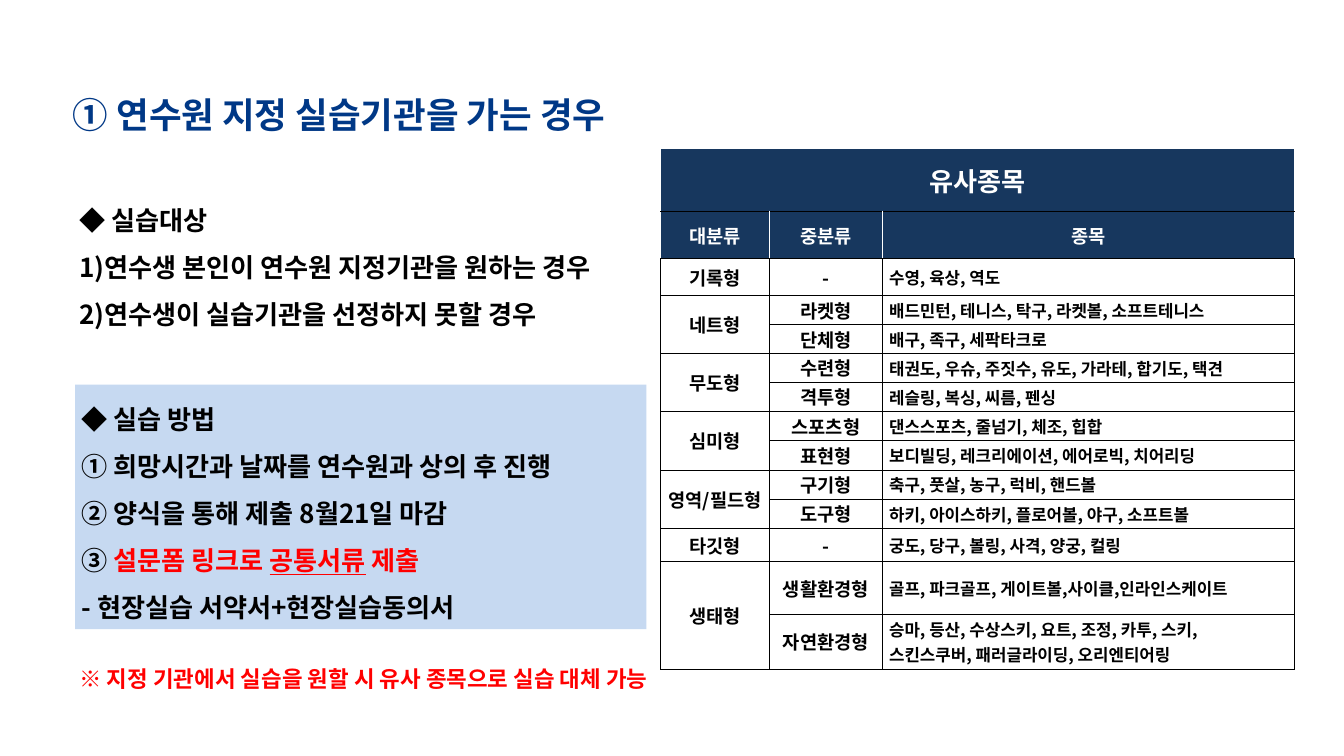
from dataclasses import dataclass

from lxml.etree import SubElement
from pptx import Presentation
from pptx.dml.color import RGBColor
from pptx.enum.shapes import MSO_SHAPE as Shape
from pptx.enum.text import MSO_ANCHOR as Anchor, MSO_AUTO_SIZE as AutoSize, PP_ALIGN as Align
from pptx.oxml.ns import qn
from pptx.util import Pt


@dataclass(frozen=True)
class Theme:
    korean: str = "Noto Sans CJK KR"
    latin: str = "Calibri"
    blue: str = "003886"
    navy: str = "17375E"
    pale: str = "C6D9F1"
    red: str = "FF0000"
    black: str = "000000"
    white: str = "FFFFFF"
    title: int = 38
    body: int = 28
    note: int = 24
    label: int = 20
    events: int = 18
    body_pitch: float = 50.4
    note_pitch: int = 30


THEME = Theme()

COLUMN_WIDTHS = [116.6, 121, 442]
ROW_HEIGHTS = [67, 51, 39.5, 31, 31, 31, 31, 31.5, 31.5, 31.5, 31, 36, 56, 59]
HEADINGS = ["대분류", "중분류", "종목"]
CATEGORIES = [
    ("기록형", [("-", "수영, 육상, 역도")]),
    ("네트형", [("라켓형", "배드민턴, 테니스, 탁구, 라켓볼, 소프트테니스"),
             ("단체형", "배구, 족구, 세팍타크로")]),
    ("무도형", [("수련형", "태권도, 우슈, 주짓수, 유도, 가라테, 합기도, 택견"),
             ("격투형", "레슬링, 복싱, 씨름, 펜싱")]),
    ("심미형", [("스포츠형", "댄스스포츠, 줄넘기, 체조, 힙합"),
             ("표현형", "보디빌딩, 레크리에이션, 에어로빅, 치어리딩")]),
    ("영역/필드형", [("구기형", "축구, 풋살, 농구, 럭비, 핸드볼"),
                ("도구형", "하키, 아이스하키, 플로어볼, 야구, 소프트볼")]),
    ("타깃형", [("-", "궁도, 당구, 볼링, 사격, 양궁, 컬링")]),
    ("생태형", [("생활환경형", "골프, 파크골프, 게이트볼,사이클,인라인스케이트"),
             ("자연환경형", "승마, 등산, 수상스키, 요트, 조정, 카투, 스키,\n"
                       "스킨스쿠버, 패러글라이딩, 오리엔티어링")]),
]


def rgb(color):
    return RGBColor.from_string(color)


def style(paragraph, size, color, align=Align.LEFT, pitch=None):
    paragraph.alignment = align
    if pitch:
        paragraph.line_spacing = Pt(pitch)
    font = paragraph.font
    font.size = Pt(size)
    font.bold = True
    font.color.rgb = rgb(color)
    font.name = THEME.korean
    SubElement(font._rPr, qn("a:ea"), typeface=THEME.korean)


def number(paragraph, position):
    properties = paragraph._p.get_or_add_pPr()
    properties.set("marL", str(Pt(27)))
    properties.set("indent", str(Pt(-27)))
    SubElement(properties, qn("a:buAutoNum"), type="arabicParenR", startAt=str(position))


def add_lines(frame, lines):
    frame.word_wrap = True
    frame.vertical_anchor = Anchor.TOP
    frame.text = "\n".join(lines)
    return frame.paragraphs


def add_text(slide, box, lines):
    return add_lines(slide.shapes.add_textbox(*map(Pt, box)).text_frame, lines)


def set_title(slide):
    title = slide.shapes.title
    title.left, title.top, title.width, title.height = map(Pt, (78, 97, 615, 48))
    frame = title.text_frame
    heading = add_lines(frame, [""])[0]
    frame.auto_size = AutoSize.NONE
    frame.margin_left = frame.margin_right = frame.margin_bottom = 0
    frame.margin_top = Pt(2.8)
    style(heading, THEME.title, THEME.blue)
    marker = heading.add_run()
    marker.text = "① "
    marker.font.name = THEME.latin
    heading.add_run().text = "연수원 지정 실습기관을 가는 경우"


def add_target(slide):
    heading, *cases = add_text(slide, (78, 199, 593, 160), [
        "◆ 실습대상", "연수생 본인이 연수원 지정기관을 원하는 경우", "연수생이 실습기관을 선정하지 못할 경우"])
    for position, case in enumerate(cases, 1):
        number(case, position)
    for paragraph in (heading, *cases):
        style(paragraph, THEME.body, THEME.black, pitch=THEME.body_pitch)


def add_method(slide):
    panel = slide.shapes.add_shape(Shape.RECTANGLE, Pt(80.6), Pt(412), Pt(612), Pt(262))
    panel.shadow.inherit = False
    panel.fill.solid()
    panel.fill.fore_color.rgb = rgb(THEME.pale)
    panel.line.fill.background()
    steps = add_lines(panel.text_frame, [
        "◆ 실습 방법", "① 희망시간과 날짜를 연수원과 상의 후 진행", "② 양식을 통해 제출 8월21일 마감",
        "③ ", "- 현장실습 서약서+현장실습동의서"])
    for step in steps:
        style(step, THEME.body, THEME.black, pitch=THEME.body_pitch)
    for words, underlined in (("설문폼 링크로 ", False), ("공통서류", True), (" 제출", False)):
        run = steps[3].add_run()
        run.text = words
        run.font.color.rgb = rgb(THEME.red)
        run.font.underline = underlined


def add_note(slide):
    note, = add_text(slide, (70.6, 707.8, 630, 36),
                     ["※ 지정 기관에서 실습을 원할 시 유사 종목으로 실습 대체 가능"])
    style(note, THEME.note, THEME.red, Align.RIGHT, THEME.note_pitch)


def set_borders(cell, left, right, top, bottom):
    properties = cell._tc.get_or_add_tcPr()
    for side, color in zip("LRTB", (left, right, top, bottom)):
        line = SubElement(properties, qn(f"a:ln{side}"), w=str(Pt(1)))
        SubElement(SubElement(line, qn("a:solidFill")), qn("a:srgbClr"), val=color)


def fill_cell(cell, words, size, color, align=Align.CENTER):
    cell.vertical_anchor = Anchor.MIDDLE
    cell.margin_top = cell.margin_bottom = 0
    cell.text = words
    for paragraph in cell.text_frame.paragraphs:
        style(paragraph, size, color, align)


def paint_cell(cell, row):
    header = row < 2
    side = THEME.white if header else THEME.black
    top = THEME.white if row == 0 else THEME.black
    set_borders(cell, side, side, top, THEME.black)
    cell.fill.solid()
    cell.fill.fore_color.rgb = rgb(THEME.navy if header else THEME.white)


def add_events_table(slide):
    table = slide.shapes.add_table(
        len(ROW_HEIGHTS), len(COLUMN_WIDTHS), Pt(707.8), Pt(159.1),
        Pt(sum(COLUMN_WIDTHS)), Pt(sum(ROW_HEIGHTS))).table
    table.first_row = table.horz_banding = False
    for column, width in zip(table.columns, COLUMN_WIDTHS):
        column.width = Pt(width)
    for index, height in enumerate(ROW_HEIGHTS):
        table.rows[index].height = Pt(height)
        for cell in table.rows[index].cells:
            paint_cell(cell, index)

    table.cell(0, 0).merge(table.cell(0, 2))
    fill_cell(table.cell(0, 0), "유사종목", THEME.body, THEME.white)
    for column, heading in enumerate(HEADINGS):
        fill_cell(table.cell(1, column), heading, THEME.label, THEME.white)

    row = 2
    for category, groups in CATEGORIES:
        if len(groups) > 1:
            table.cell(row, 0).merge(table.cell(row + len(groups) - 1, 0))
        fill_cell(table.cell(row, 0), category, THEME.label, THEME.black)
        for group, events in groups:
            fill_cell(table.cell(row, 1), group, THEME.label, THEME.black)
            fill_cell(table.cell(row, 2), events, THEME.events, THEME.black, Align.LEFT)
            row += 1


def main():
    deck = Presentation()
    deck.slide_width, deck.slide_height = Pt(1440), Pt(810)
    slide = deck.slides.add_slide(deck.slide_layouts.get_by_name("Title Only"))
    set_title(slide)
    add_target(slide)
    add_method(slide)
    add_events_table(slide)
    add_note(slide)
    deck.save("out.pptx")


if __name__ == "__main__":
    main()
